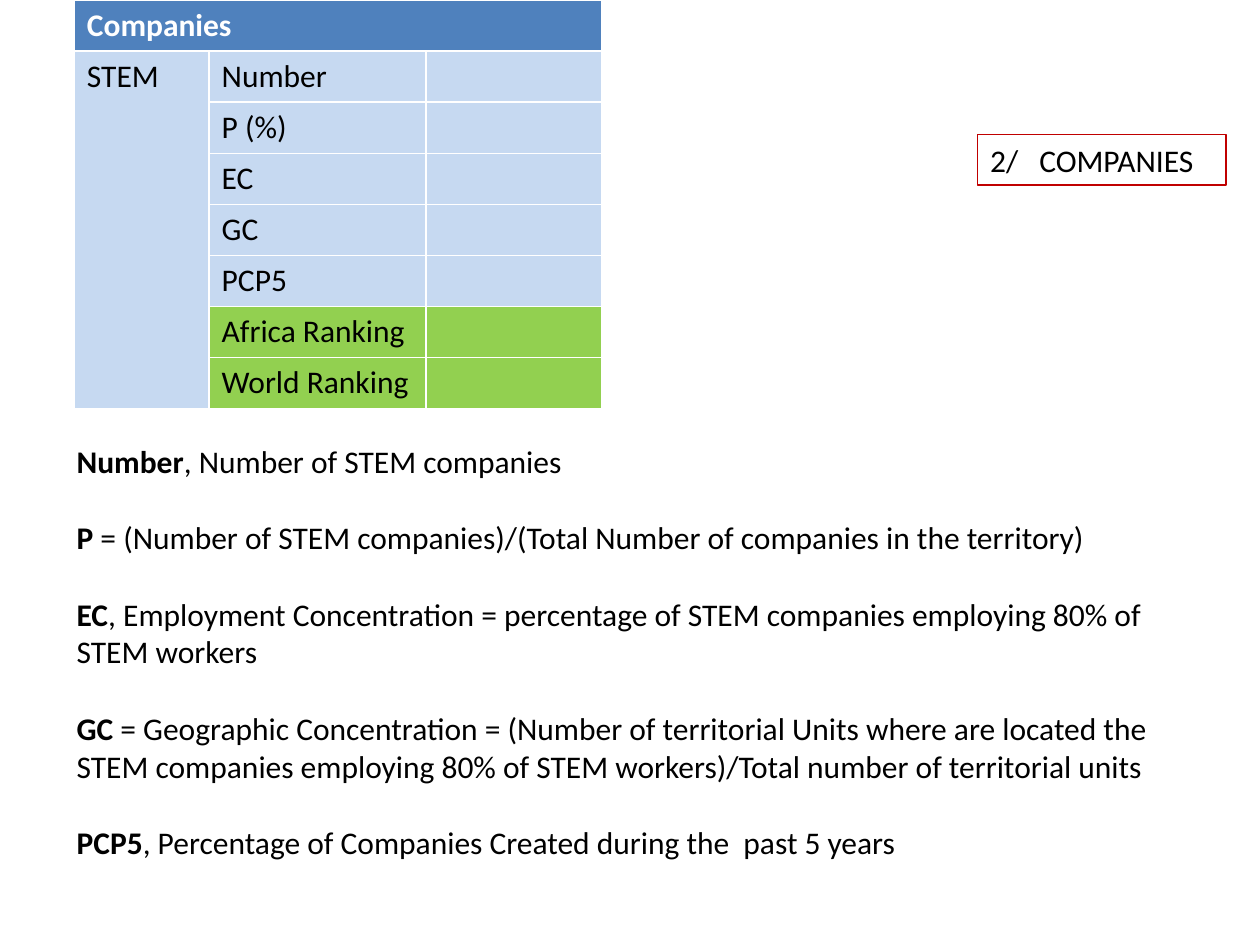
from pptx import Presentation
from pptx.dml.color import RGBColor
from pptx.enum.shapes import MSO_SHAPE
from pptx.enum.text import MSO_ANCHOR, PP_ALIGN
from pptx.util import Inches, Pt

RECTANGLE = MSO_SHAPE.RECTANGLE
MIDDLE = MSO_ANCHOR.MIDDLE
LEFT = PP_ALIGN.LEFT

COLORS = {
    "header": "4F81BD",
    "cell": "C6D9F1",
    "ranking": "92D050",
    "outline": "C00000",
    "text": "000000",
    "light": "FFFFFF",
}
INDICATORS = ["Number", "P (%)", "EC", "GC", "PCP5", "Africa Ranking", "World Ranking"]
DEFINITIONS = [
    ("Number", ", Number of STEM companies"),
    ("P", " = (Number of STEM companies)/(Total Number of companies in the territory)"),
    ("EC", ", Employment Concentration = percentage of STEM companies employing 80% of STEM workers"),
    ("GC", " = Geographic Concentration = (Number of territorial Units where are located the "
           "STEM companies employing 80% of STEM workers)/Total number of territorial units"),
    ("PCP5", ", Percentage of Companies Created during the  past 5 years"),
]


def rgb(name):
    """Return the named colour."""
    return RGBColor.from_string(COLORS[name])


def add_text(para, text, size=18, color="text", bold=False, font="Calibri"):
    """Append a formatted span to a paragraph."""
    span = para.add_run()
    span.text = text
    span.font.size = Pt(size)
    span.font.name = font
    span.font.bold = bold
    span.font.color.rgb = rgb(color)


def fill_cell(cell, color):
    """Give a table cell a solid fill."""
    cell.fill.solid()
    cell.fill.fore_color.rgb = rgb(color)


def add_company_table(page, left, top, width, height):
    """Place the table of company indicators."""
    rows = len(INDICATORS) + 1
    table = page.shapes.add_table(rows, 3, left, top, width, height).table
    table.horz_banding = False
    table.columns[0].width = Inches(1.07)
    table.columns[1].width = Inches(1.72)
    table.columns[2].width = width - Inches(2.79)
    for column in range(3):
        fill_cell(table.cell(0, column), "header")
    for row, label in enumerate(INDICATORS, 1):
        color = "ranking" if label.endswith("Ranking") else "cell"
        fill_cell(table.cell(row, 0), "cell")
        fill_cell(table.cell(row, 1), color)
        fill_cell(table.cell(row, 2), color)
        add_text(table.cell(row, 1).text_frame.paragraphs[0], label)
    table.cell(0, 0).merge(table.cell(0, 2))
    table.cell(1, 0).merge(table.cell(rows - 1, 0))
    add_text(table.cell(0, 0).text_frame.paragraphs[0], "Companies", color="light", bold=True)
    add_text(table.cell(1, 0).text_frame.paragraphs[0], "STEM")


def add_definitions(page, left, top, width, height):
    """Place the definitions of the indicators, one paragraph each."""
    frame = page.shapes.add_textbox(left, top, width, height).text_frame
    frame.word_wrap = True
    for index, (term, meaning) in enumerate(DEFINITIONS):
        para = frame.add_paragraph() if index else frame.paragraphs[0]
        para.space_before = Pt(22 if index else 0)
        add_text(para, term, bold=True)
        add_text(para, meaning)


def add_section_label(page, left, top, width, height):
    """Place the outlined section label."""
    box = page.shapes.add_shape(RECTANGLE, left, top, width, height)
    box.shadow.inherit = False
    box.fill.background()
    box.line.color.rgb = rgb("outline")
    box.line.width = Pt(0.75)
    frame = box.text_frame
    frame.word_wrap = True
    frame.vertical_anchor = MIDDLE
    para = frame.paragraphs[0]
    para.alignment = LEFT
    indent = Inches(0.39)
    properties = para._p.get_or_add_pPr()
    properties.set("marL", str(indent))
    properties.set("indent", str(-indent))
    add_text(para, "2/\tCOMPANIES")


def main():
    """Build and save the slide."""
    deck = Presentation()
    deck.slide_width = Inches(10)
    deck.slide_height = Inches(7.5)
    page = deck.slides.add_slide(deck.slide_layouts[6])
    add_company_table(page, Inches(0.59), Inches(0), Inches(4.19), Inches(3.2))
    add_definitions(page, Inches(0.51), Inches(3.46), Inches(8.9), Inches(3.43))
    add_section_label(page, Inches(7.76), Inches(1.07), Inches(1.97), Inches(0.4))
    deck.save("out.pptx")


if __name__ == "__main__":
    main()
